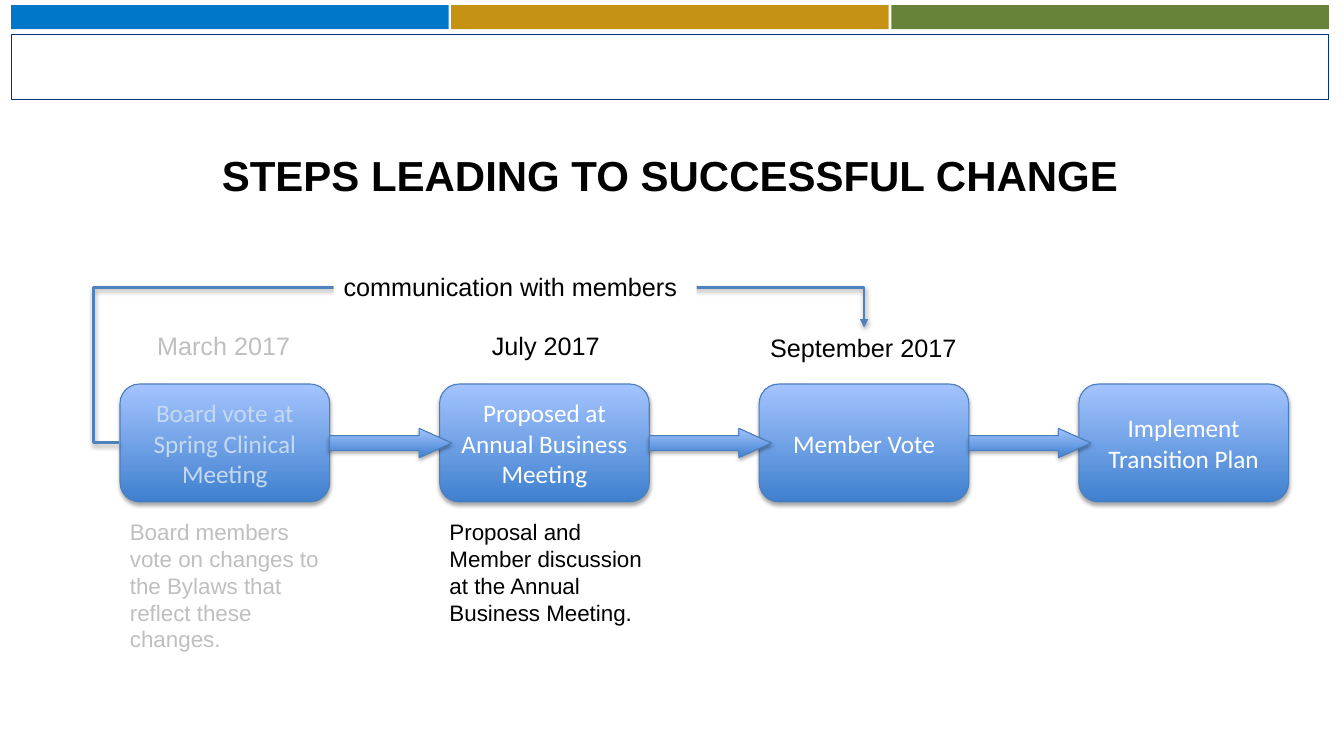
"""Build the slide showing the steps that lead to a successful change."""
from lxml import etree
from pptx import Presentation
from pptx.dml.color import RGBColor
from pptx.enum.shapes import MSO_CONNECTOR, MSO_SHAPE
from pptx.enum.text import MSO_ANCHOR, MSO_AUTO_SIZE, PP_ALIGN
from pptx.oxml import parse_xml
from pptx.oxml.ns import nsdecls, qn
from pptx.util import Inches, Pt

RECTANGLE, ROUNDED, ARROW = MSO_SHAPE.RECTANGLE, MSO_SHAPE.ROUNDED_RECTANGLE, MSO_SHAPE.RIGHT_ARROW
LEFT, CENTER = PP_ALIGN.LEFT, PP_ALIGN.CENTER
TOP, MIDDLE = MSO_ANCHOR.TOP, MSO_ANCHOR.MIDDLE
FIT, ELBOW = MSO_AUTO_SIZE.SHAPE_TO_FIT_TEXT, MSO_CONNECTOR.ELBOW

THEME = {
    "bands": ("0077C8", "C69214", "67823A"),
    "frame": "003087",
    "gradient": ("3F80CE", "A4C4FF"),
    "outline": "4B7EBC",
    "connector": "4F81BD",
    "white": "FFFFFF",
    "title": {"size": Pt(30), "name": "Arial", "bold": True},
    "step": {"size": Pt(18), "name": "Calibri"},
    "label": {"size": Pt(18), "name": "Arial"},
    "note": {"size": Pt(16), "name": "Arial"},
    "text": "000000",
    "faded": "BFBFBF",
    "faded_step": "C6D9F1",
}

TITLE = "STEPS LEADING TO SUCCESSFUL CHANGE"
LOOP_LABEL = "communication with members"
STEPS = [
    ("Board vote at Spring Clinical Meeting", "faded_step"),
    ("Proposed at Annual Business Meeting", "white"),
    ("Member Vote", "white"),
    ("Implement Transition Plan", "white"),
]
DATES = [
    ("March 2017", "faded", (1.46, 3.23, 1.53, 0.4)),
    ("July 2017", "text", (4.78, 3.23, 1.28, 0.4)),
    ("September 2017", "text", (7.54, 3.25, 2.07, 0.4)),
]
NOTES = [
    ("Board members vote on changes to the Bylaws that reflect these changes.", "faded", 1.45),
    ("Proposal and Member discussion at the Annual Business Meeting.", "text", 1.18),
]

BAND_LEFT, BAND_PITCH, BAND_WIDTH = 0.11, 4.365, 4.34
STEP_LEFT, STEP_PITCH, STEP_TOP, STEP_WIDTH, STEP_HEIGHT = 1.19, 3.17, 3.81, 2.08, 1.17
ARROW_TOP, ARROW_WIDTH, ARROW_HEIGHT = 4.25, 1.21, 0.29
NOTE_TOP, NOTE_WIDTH = 5.09, 2.13
LOOP_START, LOOP_END = (1.18, 4.39), (8.57, 3.25)
LOOP_LEFT, LOOP_TOP = 0.93, 2.85


def color(name):
    return RGBColor.from_string(THEME.get(name, name))


def add_shadow(properties, opacity, distance):
    effects = properties.find(qn("a:effectLst"))
    if effects is None:
        effects = etree.SubElement(properties, qn("a:effectLst"))
    effects.append(parse_xml(
        f'<a:outerShdw {nsdecls("a")} blurRad="{Pt(3.1)}" dist="{Pt(distance)}" dir="5400000" rotWithShape="0">'
        f'<a:srgbClr val="000000"><a:alpha val="{opacity * 1000}"/></a:srgbClr></a:outerShdw>'))


def add_shape(slide, kind, box, fill=None, line=None, width=0.75):
    shape = slide.shapes.add_shape(kind, *map(Inches, box))
    shape.shadow.inherit = False
    if fill:
        shape.fill.solid()
        shape.fill.fore_color.rgb = color(fill)
    else:
        shape.fill.background()
    if line:
        shape.line.color.rgb = color(line)
        shape.line.width = Pt(width)
    else:
        shape.line.fill.background()
    return shape


def add_glossy(slide, kind, box):
    shape = add_shape(slide, kind, box, line="outline")
    shape.fill.gradient()
    shape.fill.gradient_angle = 90
    for stop, value in zip(shape.fill.gradient_stops, THEME["gradient"]):
        stop.color.rgb = color(value)
    add_shadow(shape._element.spPr, 35, 1.8)
    return shape


def write(shape, text, style, text_color, align=LEFT, anchor=TOP, wrap=True, fit=False):
    frame = shape.text_frame
    settings = {"word_wrap": wrap, "vertical_anchor": anchor}
    if fit:
        settings["auto_size"] = FIT
    for name, value in settings.items():
        setattr(frame, name, value)
    paragraph = frame.paragraphs[0]
    paragraph.text = text
    paragraph.alignment = align
    for name, value in THEME[style].items():
        setattr(paragraph.runs[0].font, name, value)
    paragraph.runs[0].font.color.rgb = color(text_color)


def add_text(slide, box, *content, **layout):
    write(slide.shapes.add_textbox(*map(Inches, box)), *content, **layout)


def add_loop(slide):
    (start_x, start_y), (end_x, end_y) = LOOP_START, LOOP_END
    loop = slide.shapes.add_connector(ELBOW, *map(Inches, LOOP_START + LOOP_END))
    loop.line.color.rgb = color("connector")
    loop.line.width = Pt(2)
    properties = loop._element.spPr
    etree.SubElement(properties.find(qn("a:ln")), qn("a:tailEnd"), type="triangle")
    geometry = properties.find(qn("a:prstGeom"))
    geometry.set("prst", "bentConnector4")
    guides = geometry.find(qn("a:avLst"))
    bends = ((LOOP_LEFT - start_x) / (end_x - start_x), (LOOP_TOP - start_y) / (end_y - start_y))
    for number, bend in enumerate(bends, 1):
        etree.SubElement(guides, qn("a:gd"), name=f"adj{number}", fmla=f"val {round(bend * 100000)}")
    add_shadow(properties, 38, 1.6)


def main():
    presentation = Presentation()
    presentation.slide_width, presentation.slide_height = Inches(13.33), Inches(7.5)
    slide = presentation.slides.add_slide(presentation.slide_layouts[6])

    for index, band in enumerate(THEME["bands"]):
        add_shape(slide, RECTANGLE, (BAND_LEFT + index * BAND_PITCH, 0.05, BAND_WIDTH, 0.24), band)
    add_shape(slide, RECTANGLE, (BAND_LEFT, 0.34, 13.07, 0.65), line="frame", width=0.5)
    add_text(slide, (0.65, 1.26, 12, 0.95), TITLE, "title", "text", align=CENTER, anchor=MIDDLE)

    lefts = [STEP_LEFT + index * STEP_PITCH for index in range(len(STEPS))]
    for left, (text, text_color) in zip(lefts, STEPS):
        step = add_glossy(slide, ROUNDED, (left, STEP_TOP, STEP_WIDTH, STEP_HEIGHT))
        write(step, text, "step", text_color, align=CENTER, anchor=MIDDLE)
    for left in lefts[:-1]:
        arrow = add_glossy(slide, ARROW, (left + STEP_WIDTH, ARROW_TOP, ARROW_WIDTH, ARROW_HEIGHT))
        arrow.adjustments[1] = 1.11

    for left, (text, text_color, height) in zip(lefts, NOTES):
        add_text(slide, (left, NOTE_TOP, NOTE_WIDTH, height), text, "note", text_color, fit=True)
    for text, text_color, box in DATES:
        add_text(slide, box, text, "label", text_color, wrap=False, fit=True)

    add_loop(slide)
    label = add_shape(slide, RECTANGLE, (3.31, 2.64, 3.6, 0.4), "white")
    write(label, LOOP_LABEL, "label", "text", wrap=False, fit=True)
    presentation.save("out.pptx")


if __name__ == "__main__":
    main()
